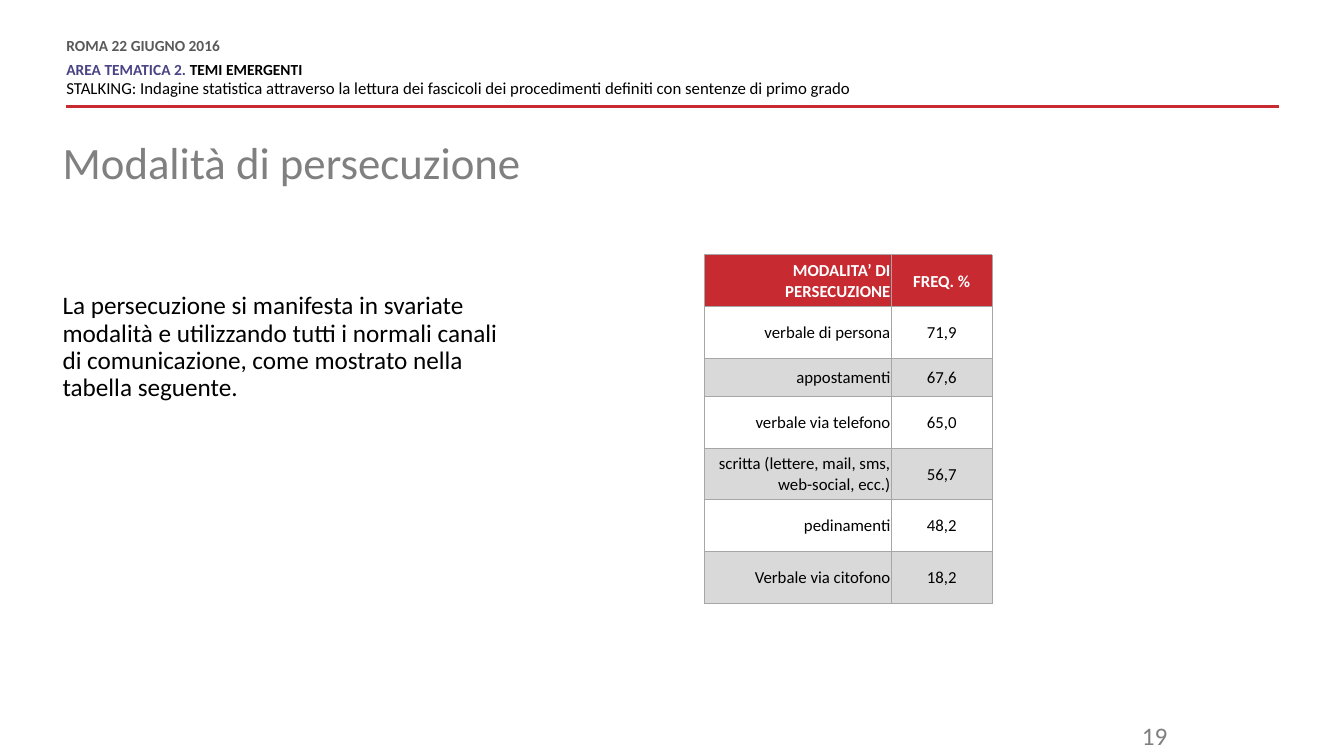
from lxml.etree import SubElement as Sub
from pptx import Presentation
from pptx.dml.color import RGBColor as RGB
from pptx.enum.shapes import MSO_CONNECTOR as Link
from pptx.enum.text import MSO_ANCHOR as Anchor, MSO_AUTO_SIZE as Auto, PP_ALIGN as Align
from pptx.oxml.ns import qn
from pptx.util import Inches, Pt

CELL = Inches(1) / 12  # grid of 160 columns by 90 rows
COLS, ROWS = 160, 90
FONT = "Calibri"
HUES = {"red": "C72A31", "violet": "484384", "black": "000000", "white": "FFFFFF",
        "dark": "595959", "mid": "808080", "soft": "7F7F7F", "edge": "A6A6A6",
        "band": "D9D9D9"}
DATA = [("MODALITA’ DI PERSECUZIONE", "FREQ. %"),
        ("verbale di persona", "71,9"),
        ("appostamenti", "67,6"),
        ("verbale via telefono", "65,0"),
        ("scritta (lettere, mail, sms, web-social, ecc.)", "56,7"),
        ("pedinamenti", "48,2"),
        ("Verbale via citofono", "18,2")]
TALL, SHORT = 6.16, 4.54


def grid(*cells):
    return [round(c * CELL) for c in cells]


def hue(name):
    return RGB.from_string(HUES[name])


def place(shape, box):
    shape.left, shape.top, shape.width, shape.height = grid(*box)


def bare(frame):
    frame.word_wrap = True
    frame.auto_size = Auto.NONE
    frame.vertical_anchor = Anchor.TOP
    frame.margin_left = frame.margin_right = frame.margin_top = frame.margin_bottom = 0


def write(para, text, size=12, color="black", bold=False, align=Align.LEFT,
          line=None, before=0, after=0):
    para.alignment = align
    para.space_before, para.space_after = Pt(before), Pt(after)
    if line:
        para.line_spacing = line
    run = para.add_run()
    run.text = text
    font = run.font
    font.name, font.size, font.bold = FONT, Pt(size), bold
    font.color.rgb = hue(color)


def header(slide, box):
    left, top, width, height = box
    frame = slide.shapes.add_textbox(*grid(left, top, width * 0.82, height * 0.88)).text_frame
    bare(frame)
    date, area, topic = frame.paragraphs[0], frame.add_paragraph(), frame.add_paragraph()
    lead = Pt(10.8)
    write(date, "ROMA 22 GIUGNO 2016", 11, "dark", True, line=lead, after=6)
    write(area, "AREA TEMATICA 2. ", 11, "violet", True, line=lead)
    write(area, "TEMI EMERGENTI", 11, bold=True, line=lead)
    write(topic, "STALKING: Indagine statistica attraverso la lettura dei fascicoli "
          "dei procedimenti definiti con sentenze di primo grado",
          line=lead, before=3, after=6)
    base = top + height
    rule = slide.shapes.add_connector(Link.STRAIGHT, *grid(left, base, left + width, base))
    rule.line.color.rgb, rule.line.width = hue("red"), Pt(2)
    Sub(rule._element.spPr, qn("a:effectLst"))


def title(slide, box):
    shape = slide.shapes.title
    place(shape, box)
    bare(shape.text_frame)
    write(shape.text_frame.paragraphs[0], "Modalità di persecuzione", 32, "mid", line=0.9)


def body(slide, box):
    shape = slide.placeholders[1]
    place(shape, box)
    bare(shape.text_frame)
    para = shape.text_frame.paragraphs[0]
    props = para._p.get_or_add_pPr()
    props.set("marL", "0")
    props.set("indent", "0")
    Sub(props, qn("a:buNone"))
    write(para, "La persecuzione si manifesta in svariate modalità e utilizzando tutti i "
          "normali canali di comunicazione, come mostrato nella tabella seguente.",
          18, line=0.9)


def border(cell):
    props = cell._tc.get_or_add_tcPr()
    for side in ("lnL", "lnR", "lnT", "lnB"):
        edge = Sub(props, qn(f"a:{side}"), w=str(Pt(0.75)))
        Sub(Sub(edge, qn("a:solidFill")), qn("a:srgbClr"), val=HUES["edge"])


def table(slide, box):
    width = box[2]
    grown = slide.shapes.add_table(len(DATA), 2, *grid(*box)).table
    for col, share in zip(grown.columns, (0.65, 0.35)):
        col.width = grid(width * share)[0]
    for r, texts in enumerate(DATA):
        grown.rows[r].height = grid(SHORT if r == 2 else TALL)[0]
        head = r == 0
        fill = "red" if head else "white" if r % 2 else "band"
        for c, text in enumerate(texts):
            cell = grown.cell(r, c)
            border(cell)
            cell.fill.solid()
            cell.fill.fore_color.rgb = hue(fill)
            cell.vertical_anchor = Anchor.MIDDLE
            cell.margin_left = cell.margin_right = cell.margin_top = Inches(0.01)
            cell.margin_bottom = 0
            write(cell.text_frame.paragraphs[0], text, color="white" if head else "black",
                  bold=head, align=Align.CENTER if c else Align.RIGHT)


def number(slide, box):
    frame = slide.shapes.add_textbox(*grid(*box)).text_frame
    frame.word_wrap = True
    write(frame.paragraphs[0], "19", 18, "soft", align=Align.RIGHT)


def main():
    deck = Presentation()
    deck.slide_width, deck.slide_height = grid(COLS, ROWS)
    slide = deck.slides.add_slide(deck.slide_layouts[1])
    header(slide, (7.9, 4.7, 144.4, 8))
    title(slide, (7.45, 16.7, 66.6, 13.5))
    body(slide, (7.45, 34.9, 53.4, 40))
    table(slide, (83.9, 30.35, 34.2, 6 * TALL + SHORT))
    number(slide, (126, 85.1, 14.15, 4.2))
    deck.save("out.pptx")


if __name__ == "__main__":
    main()
